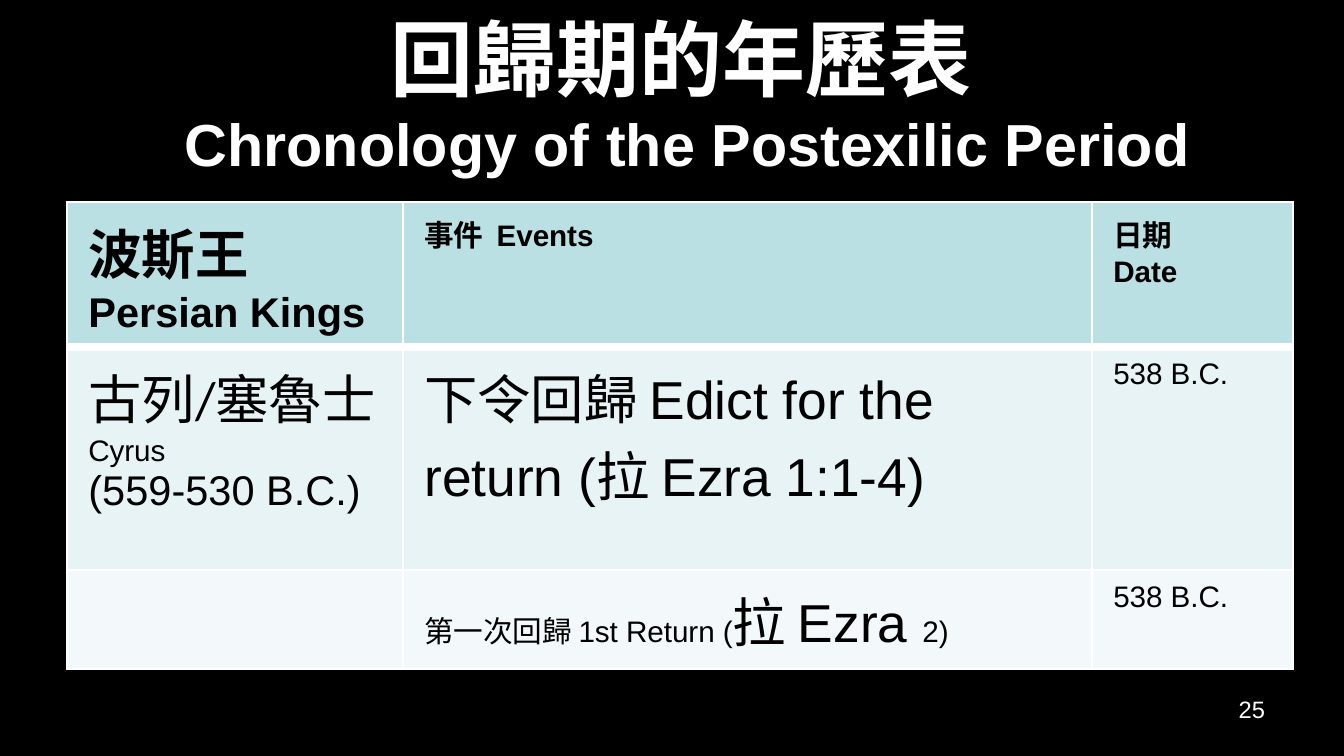
from dataclasses import dataclass

from lxml import etree
from pptx import Presentation
from pptx.dml.color import RGBColor
from pptx.enum.text import MSO_ANCHOR, MSO_AUTO_SIZE, PP_ALIGN
from pptx.oxml.ns import qn
from pptx.util import Emu, Pt

CENTER, RIGHT, LEFT = PP_ALIGN.CENTER, PP_ALIGN.RIGHT, PP_ALIGN.LEFT
TOP, MIDDLE = MSO_ANCHOR.TOP, MSO_ANCHOR.MIDDLE
NO_FIT = MSO_AUTO_SIZE.NONE
SCALE = 4286.25


@dataclass(frozen=True)
class Theme:
    back: str = "000000"
    ink: str = "000000"
    white: str = "FFFFFF"
    head: str = "BBE0E3"
    odd: str = "E7F3F4"
    even: str = "F3F9FA"
    han: str = "Calibri"
    latin: str = "Arial"
    title: int = 28
    sub: int = 20
    large: int = 18
    mid: int = 14
    small: int = 10
    page: int = 8
    thin: int = 1
    thick: int = 3


T = Theme()


@dataclass(frozen=True)
class Run:
    text: str
    size: int
    font: str = T.latin


@dataclass(frozen=True)
class Row:
    height: int
    fill: str
    cells: list
    bold: bool = False
    above: int = T.thin
    below: int = T.thin


def px(n: int) -> Emu:
    return Emu(round(n * SCALE))


def han(text: str, size: int) -> Run:
    return Run(text, size, T.han)


def write(frame, paras: list, *, color: str = T.ink, bold: bool = False,
          align=LEFT, anchor=TOP, inset: tuple = (21, 11)) -> None:
    frame.word_wrap = True
    frame.vertical_anchor = anchor
    frame.margin_left = frame.margin_right = px(inset[0])
    frame.margin_top = frame.margin_bottom = px(inset[1])
    for i, runs in enumerate(paras):
        para = frame.paragraphs[0] if i == 0 else frame.add_paragraph()
        para.alignment = align
        for part in runs:
            for j, line in enumerate(part.text.split("\n")):
                if j:
                    para.add_line_break()
                if not line:
                    continue
                run = para.add_run()
                run.text = line
                font = run.font
                font.name, font.size, font.bold = part.font, Pt(part.size), bold
                font.color.rgb = RGBColor.from_string(color)


def edge(cell, side: str, width: int) -> None:
    props = cell._tc.get_or_add_tcPr()
    line = etree.SubElement(props, qn(f"a:ln{side}"), w=str(Pt(width)))
    fill = etree.SubElement(line, qn("a:solidFill"))
    etree.SubElement(fill, qn("a:srgbClr"), val=T.white)


def grid(slide, left: int, top: int, cols: list[int], rows: list[Row]) -> None:
    high = sum(row.height for row in rows)
    table = slide.shapes.add_table(
        len(rows), len(cols), px(left), px(top), px(sum(cols)), px(high)).table
    table.first_row = table.horz_banding = False
    for col, width in zip(table.columns, cols):
        col.width = px(width)
    for r, row in enumerate(rows):
        table.rows[r].height = px(row.height)
        for c, paras in enumerate(row.cells):
            cell = table.cell(r, c)
            widths = {"L": T.thin, "R": T.thin, "T": row.above, "B": row.below}
            for side, width in widths.items():
                edge(cell, side, width)
            cell.fill.solid()
            cell.fill.fore_color.rgb = RGBColor.from_string(row.fill)
            write(cell.text_frame, paras, bold=row.bold)


TITLE = [[han("回歸期的年歷表\n", T.title),
          Run(" Chronology of the Postexilic Period", T.sub)]]
DATE = [[Run("538 B.C.", T.small)]]
ROWS = [
    Row(145, T.head, [
        [[han("波斯王", T.large), Run("Persian Kings", T.mid)]],
        [[han("事件  ", T.small), Run("Events", T.small)]],
        [[han("日期", T.small)], [Run("Date", T.small)]],
    ], bold=True, below=T.thick),
    Row(223, T.odd, [
        [[han("古列/塞魯士", T.large), Run("Cyrus", T.small)],
         [Run("(559-530 B.C.)", T.mid)]],
        [[han("下令回歸 ", T.large), Run("Edict for the return (", T.large),
          han("拉 ", T.large), Run("Ezra 1:1-4)", T.large)]],
        DATE,
    ], above=T.thick),
    Row(99, T.even, [
        [],
        [[han("第一次回歸 ", T.small), Run("1st Return (", T.small),
          han("拉 ", T.large), Run("Ezra ", T.large), Run("2)", T.small)]],
        DATE,
    ]),
]


def main() -> None:
    deck = Presentation()
    deck.slide_width, deck.slide_height = px(1344), px(756)
    slide = deck.slides.add_slide(deck.slide_layouts[5])
    slide.background.fill.solid()
    slide.background.fill.fore_color.rgb = RGBColor.from_string(T.back)

    title = slide.shapes.title
    title.left, title.top, title.width, title.height = map(px, (51, 30, 1260, 126))
    title.text_frame.auto_size = NO_FIT
    write(title.text_frame, TITLE, color=T.white, bold=True,
          align=CENTER, anchor=MIDDLE, inset=(13, 6))

    grid(slide, 67, 202, [336, 689, 201], ROWS)

    page = slide.shapes.add_textbox(*map(px, (964, 689, 314, 51)))
    write(page.text_frame, [[Run("25", T.page)]], color=T.white,
          align=RIGHT, inset=(13, 6))
    deck.save("out.pptx")


if __name__ == "__main__":
    main()
